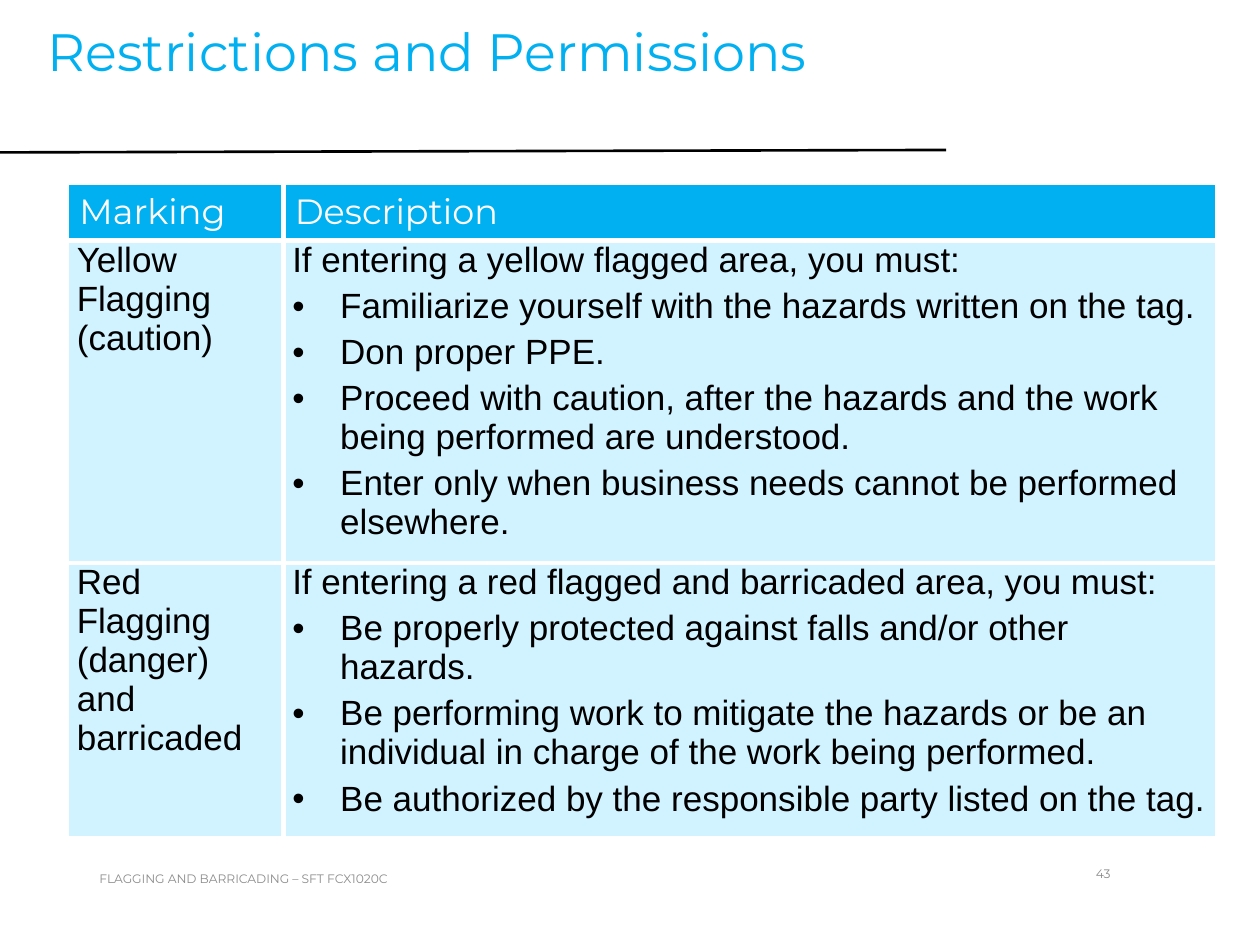
"""Build the slide on restrictions and permissions for flagged areas."""
from dataclasses import dataclass

from lxml import etree
from pptx import Presentation
from pptx.dml.color import RGBColor
from pptx.enum.shapes import MSO_CONNECTOR
from pptx.enum.text import MSO_ANCHOR, PP_ALIGN
from pptx.oxml.ns import qn
from pptx.util import Emu, Inches, Pt

STRAIGHT = MSO_CONNECTOR.STRAIGHT
TOP, MIDDLE = MSO_ANCHOR.TOP, MSO_ANCHOR.MIDDLE
LEFT, CENTER = PP_ALIGN.LEFT, PP_ALIGN.CENTER
WIDTH, HEIGHT = Inches(10), Inches(7.5)
COLUMNS, ROWS = (1.71, 7.4), (0.45, 1.94, 1.58)
BLUE, PALE, WHITE, BLACK = "00B0F0", "D1F3FF", "FFFFFF", "000000"
HEADING_FONT, BODY_FONT = "Montserrat", "Arial"
BULLET_INDENT = Inches(0.38)


@dataclass
class Label:
    text: str
    left: float
    top: float
    width: float
    height: float
    size: float
    color: str
    anchor: MSO_ANCHOR = MIDDLE
    align: PP_ALIGN = LEFT
    line_spacing: float = 1.0
    space_before: float = 0


@dataclass
class CellStyle:
    font: str
    color: str
    fill: str
    margin: float
    spacing: float
    anchor: MSO_ANCHOR


@dataclass
class Rule:
    marking: str
    intro: str
    duties: tuple[str, ...]


LABELS = (
    Label("Restrictions and Permissions", 0.028, 0.0213, 0.682, 0.248, 30, BLUE,
          anchor=TOP, line_spacing=0.9, space_before=10),
    Label("43", 0.751, 0.8973, 0.249, 0.0533, 7, "898989", align=CENTER),
    Label("FLAGGING AND BARRICADING – SFT FCX1020C",
          0.069, 0.9027, 0.6, 0.0533, 7, "8C8C8C"),
)
HEADER = CellStyle(HEADING_FONT, WHITE, BLUE, 0.09, 6, MIDDLE)
BODY = CellStyle(BODY_FONT, BLACK, PALE, 0.07, 2, TOP)
RULES = (
    Rule("Yellow Flagging (caution)",
         "If entering a yellow flagged area, you must:",
         ("Familiarize yourself with the hazards written on the tag.",
          "Don proper PPE.",
          "Proceed with caution, after the hazards and the work being "
          "performed are understood.",
          "Enter only when business needs cannot be performed elsewhere.")),
    Rule("Red Flagging (danger) and barricaded",
         "If entering a red flagged and barricaded area, you must:",
         ("Be properly protected against falls and/or other hazards.",
          "Be performing work to mitigate the hazards or be an individual "
          "in charge of the work being performed.",
          "Be authorized by the responsible party listed on the tag.")),
)


def rgb(color: str) -> RGBColor:
    """Turn a hex string into a colour."""
    return RGBColor.from_string(color)


def across(share: float) -> Emu:
    """Return a share of the slide's width."""
    return Emu(round(WIDTH * share))


def down(share: float) -> Emu:
    """Return a share of the slide's height."""
    return Emu(round(HEIGHT * share))


def style_runs(p, font: str, size: float, color: str) -> None:
    """Format every run of a paragraph."""
    for r in p.runs:
        r.font.name, r.font.size = font, Pt(size)
        r.font.color.rgb = rgb(color)


def add_label(s, label: Label) -> None:
    """Add a text box with a single paragraph."""
    sp = s.shapes.add_textbox(across(label.left), down(label.top),
                              across(label.width), down(label.height))
    tf = sp.text_frame
    tf.word_wrap, tf.vertical_anchor = True, label.anchor
    p = tf.paragraphs[0]
    p.text, p.alignment = label.text, label.align
    p.line_spacing, p.space_before = label.line_spacing, Pt(label.space_before)
    style_runs(p, HEADING_FONT, label.size, label.color)


def add_divider(s) -> None:
    """Add the line under the title."""
    line = s.shapes.add_connector(STRAIGHT, 0, down(0.1613),
                                  across(0.751), down(0.1587))
    line.line.color.rgb, line.line.width = rgb(BLACK), Pt(1.5)
    etree.SubElement(line._element.spPr, qn("a:effectLst"))


def add_bullet(p) -> None:
    """Give a paragraph a hanging bullet."""
    pPr = p._p.get_or_add_pPr()
    pPr.set("marL", str(BULLET_INDENT))
    pPr.set("indent", str(-BULLET_INDENT))
    etree.SubElement(pPr, qn("a:buFont"), typeface=BODY_FONT)
    etree.SubElement(pPr, qn("a:buChar"), char="•")


def add_borders(cell, sides: str) -> None:
    """Draw white borders on the given sides, listed in L, R, T, B order."""
    tcPr = cell._tc.get_or_add_tcPr()
    for i, side in enumerate(sides):
        ln = etree.Element(qn(f"a:ln{side}"), w=str(Pt(3)))
        fill = etree.SubElement(ln, qn("a:solidFill"))
        etree.SubElement(fill, qn("a:srgbClr"), val=WHITE)
        tcPr.insert(i, ln)


def fill_cell(cell, style: CellStyle, text: str,
              bullets: tuple[str, ...] = ()) -> None:
    """Write a lead paragraph and its bullets into a cell."""
    cell.fill.solid()
    cell.fill.fore_color.rgb = rgb(style.fill)
    cell.vertical_anchor = style.anchor
    cell.margin_left = cell.margin_right = Inches(style.margin)
    cell.margin_top = cell.margin_bottom = 0
    tf = cell.text_frame
    tf.text = "\n".join((text, *bullets))
    for i, p in enumerate(tf.paragraphs):
        p.space_before = p.space_after = Pt(style.spacing)
        style_runs(p, style.font, 20, style.color)
        if i:
            add_bullet(p)


def add_rules_table(s) -> None:
    """Add the table of markings and what each one demands."""
    table = s.shapes.add_table(len(ROWS), len(COLUMNS), across(0.054), down(0.1947),
                               Inches(sum(COLUMNS)), Inches(sum(ROWS))).table
    table.first_row = table.horz_banding = False
    for column, width in zip(table.columns, COLUMNS):
        column.width = Inches(width)
    for row, height in zip(table.rows, ROWS):
        row.height = Inches(height)
    for i, text in enumerate(("Marking", "Description")):
        fill_cell(table.cell(0, i), HEADER, text)
    for i, rule in enumerate(RULES, start=1):
        fill_cell(table.cell(i, 0), BODY, rule.marking)
        fill_cell(table.cell(i, 1), BODY, rule.intro, rule.duties)
    for i in range(len(ROWS)):
        inner = ("T" if i else "") + ("B" if i < len(ROWS) - 1 else "")
        add_borders(table.cell(i, 0), "R" + inner)
        add_borders(table.cell(i, 1), "L" + inner)


def main() -> None:
    """Build and save the slide."""
    prs = Presentation()
    prs.slide_width, prs.slide_height = WIDTH, HEIGHT
    s = prs.slides.add_slide(prs.slide_layouts[6])
    add_divider(s)
    for label in LABELS:
        add_label(s, label)
    add_rules_table(s)
    prs.save("out.pptx")


if __name__ == "__main__":
    main()
